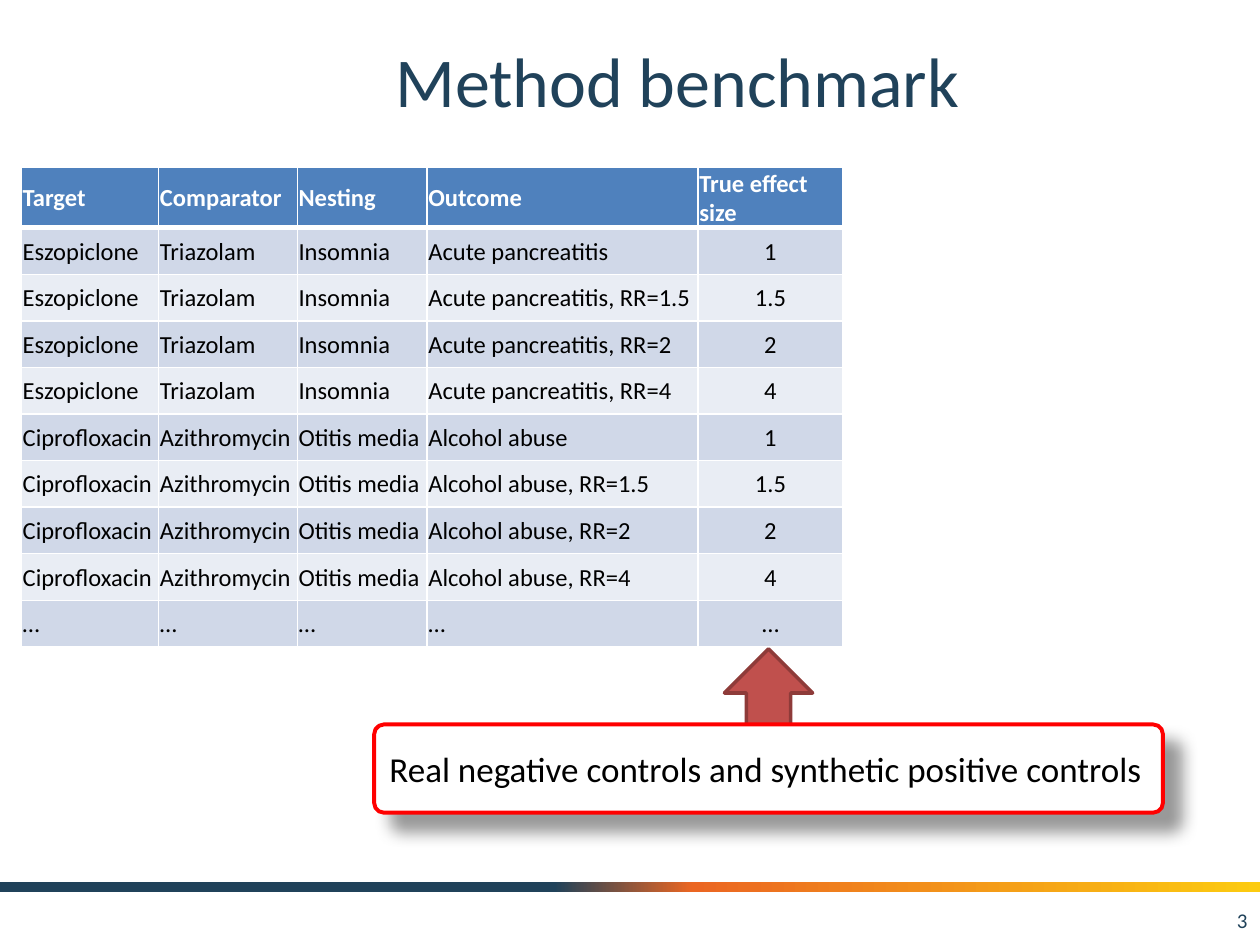
from lxml import etree
from pptx import Presentation
from pptx.dml.color import RGBColor
from pptx.enum.shapes import MSO_SHAPE
from pptx.enum.text import MSO_ANCHOR, PP_ALIGN
from pptx.oxml import parse_xml
from pptx.oxml.ns import nsdecls, qn
from pptx.util import Inches, Pt

LEFT, CENTER, RIGHT = PP_ALIGN.LEFT, PP_ALIGN.CENTER, PP_ALIGN.RIGHT
MIDDLE = MSO_ANCHOR.MIDDLE
RECT, ROUNDED = MSO_SHAPE.RECTANGLE, MSO_SHAPE.ROUNDED_RECTANGLE
UP_ARROW = MSO_SHAPE.UP_ARROW

FONT = "Calibri"
NAVY, WHITE, BLACK = "20425A", "FFFFFF", "000000"
HEADER_FILL = "4F81BD"
BAND_FILLS = ["D0D8E8", "E9EDF4"]
STRIPE_STOPS = [(44, NAVY), (55, "EB6622"), (100, "FCCB10")]

COL_WIDTHS = [1.09, 1.1, 1.03, 2.15, 1.15]
HEADER_HEIGHT, ROW_HEIGHT = 0.46, 0.37
HEADERS = ["Target", "Comparator", "Nesting", "Outcome", "True effect size"]
STUDIES = [
    ("Eszopiclone", "Triazolam", "Insomnia", "Acute pancreatitis"),
    ("Ciprofloxacin", "Azithromycin", "Otitis media", "Alcohol abuse"),
]
EFFECT_SIZES = ["1", "1.5", "2", "4"]


def rgb(value):
    return RGBColor.from_string(value)


def write(tf, text, size, color, align=LEFT, bold=False):
    p = tf.paragraphs[0]
    p.alignment = align
    r = p.add_run()
    r.text = text
    formats = {"name": FONT, "size": Pt(size), "bold": bold}
    for name, value in formats.items():
        setattr(r.font, name, value)
    r.font.color.rgb = rgb(color)


def add_text(s, box, text, size, color, align):
    tf = s.shapes.add_textbox(*map(Inches, box)).text_frame
    tf.word_wrap = True
    tf.vertical_anchor = MIDDLE
    write(tf, text, size, color, align)


def add_block(s, kind, box, fill, line, width):
    sp = s.shapes.add_shape(kind, *map(Inches, box))
    sp.shadow.inherit = False
    sp.fill.solid()
    sp.fill.fore_color.rgb = rgb(fill)
    sp.line.color.rgb = rgb(line)
    sp.line.width = Pt(width)
    return sp


def add_stripe(s, box):
    sp = s.shapes.add_shape(RECT, *map(Inches, box))
    sp.shadow.inherit = False
    sp.line.fill.background()
    sp.fill.gradient()
    sp.fill.gradient_angle = 0
    stops = next(sp._element.iter(qn("a:gsLst")))
    for stop in list(stops):
        stops.remove(stop)
    for pos, color in STRIPE_STOPS:
        gs = etree.SubElement(stops, qn("a:gs"), pos=str(pos * 1000))
        etree.SubElement(gs, qn("a:srgbClr"), val=color)


def set_borders(cell, widths):
    tc_pr = cell._tc.get_or_add_tcPr()
    for i, (side, width) in enumerate(widths.items()):
        tc_pr.insert(i, parse_xml(
            f'<a:ln{side} {nsdecls("a")} w="{Pt(width)}"><a:solidFill>'
            f'<a:srgbClr val="{WHITE}"/></a:solidFill></a:ln{side}>'))


def benchmark_rows():
    rows = [HEADERS]
    for *names, outcome in STUDIES:
        for size in EFFECT_SIZES:
            label = outcome if size == "1" else f"{outcome}, RR={size}"
            rows.append([*names, label, size])
    rows.append(["…"] * len(HEADERS))
    return rows


def add_benchmark_table(s, box):
    rows = benchmark_rows()
    shape = s.shapes.add_table(len(rows), len(HEADERS), *map(Inches, box))
    table = shape.table
    for col, width in zip(table.columns, COL_WIDTHS):
        col.width = Inches(width)
    for i, row in enumerate(rows):
        header = i == 0
        table.rows[i].height = Inches(HEADER_HEIGHT if header else ROW_HEIGHT)
        fill = HEADER_FILL if header else BAND_FILLS[(i - 1) % 2]
        borders = {"L": 1, "R": 1, "T": 3 if i == 1 else 1, "B": 3 if header else 1}
        for j, text in enumerate(row):
            cell = table.cell(i, j)
            formats = {
                "vertical_anchor": MIDDLE,
                "margin_left": Inches(0.01),
                "margin_right": Inches(0.01),
                "margin_top": Inches(0.01),
                "margin_bottom": 0,
            }
            for name, value in formats.items():
                setattr(cell, name, value)
            cell.fill.solid()
            cell.fill.fore_color.rgb = rgb(fill)
            set_borders(cell, borders)
            centered = not header and j == len(row) - 1
            write(cell.text_frame, text, 14, WHITE if header else BLACK,
                  CENTER if centered else LEFT, header)


def add_callout(s, box):
    left, top, width, height = box
    arrow_box = (left + 2.78, top - 0.6, 0.7, 0.72)
    add_block(s, UP_ARROW, arrow_box, "C0504D", "8E3B39", 2)
    sp = add_block(s, ROUNDED, box, WHITE, "FF0000", 2.25)
    sp.adjustments[0] = 0.11
    effects = sp._element.spPr.find(qn("a:effectLst"))
    shadow = etree.SubElement(
        effects, qn("a:outerShdw"), blurRad=str(Pt(9)), dist=str(Pt(14)),
        dir=str(45 * 60000), algn="tl", rotWithShape="0")
    color = etree.SubElement(shadow, qn("a:srgbClr"), val=BLACK)
    etree.SubElement(color, qn("a:alpha"), val="40000")
    tf = sp.text_frame
    tf.word_wrap = True
    tf.vertical_anchor = MIDDLE
    write(tf, "Real negative controls and synthetic positive controls", 20, BLACK)


def main():
    prs = Presentation()
    prs.slide_width, prs.slide_height = Inches(10), Inches(7.5)
    s = prs.slides.add_slide(prs.slide_layouts[6])
    add_stripe(s, (0, 7, 10, 0.08))
    add_text(s, (1.25, 0.17, 8.25, 0.92), "Method benchmark", 40, NAVY, CENTER)
    add_benchmark_table(s, (0.17, 1.33, 6.52, 3.79))
    add_text(s, (7.67, 7.1, 2.33, 0.4), "3", 12, NAVY, RIGHT)
    add_callout(s, (2.97, 5.75, 6.26, 0.7))
    prs.save("out.pptx")


if __name__ == "__main__":
    main()
